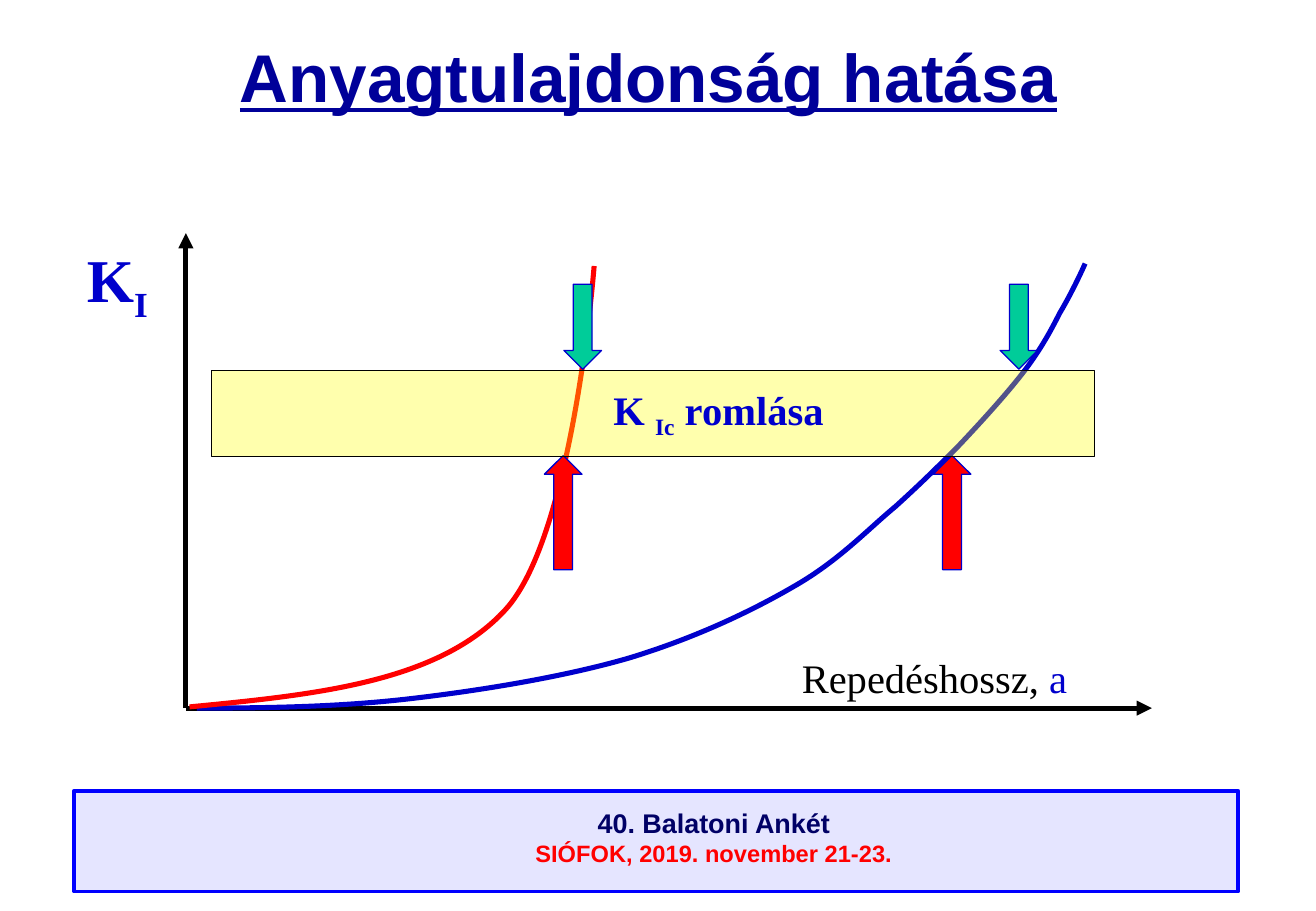
import pptx
import pptx.util
import pptx.dml.color
import pptx.enum.shapes
import pptx.enum.text
import pptx.oxml
import pptx.oxml.ns

PX = 9144  # EMU in one px, 100 px to the inch
SHAPES = pptx.enum.shapes.MSO_SHAPE
ALIGN = pptx.enum.text.PP_ALIGN
ANCHOR = pptx.enum.text.MSO_ANCHOR
COLORS = {
    "black": "000000", "blue": "0000CC", "red": "FF0000", "green": "00CC99",
    "yellow": "FFFF00", "lavender": "CCCCFF", "frame": "0000FF",
    "title": "000099", "footer": "000066",
}


def color(name):
    return pptx.dml.color.RGBColor.from_string(COLORS[name])


def child(parent, tag, **values):
    element = pptx.oxml.parse_xml(f"<a:{tag} {pptx.oxml.ns.nsdecls('a')}/>")
    for name, value in values.items():
        element.set(name, value)
    parent.append(element)
    return element


class Painter:
    """Holds the text style and the current slide."""

    style = {"name": "Times New Roman", "size": 24, "bold": False,
             "underline": False, "color": "black"}

    def __init__(self, page):
        self.page = page

    def outline(self, item, name, width):
        item.line.color.rgb = color(name)
        item.line.width = pptx.util.Pt(width)

    def shape(self, kind, left, top, width, height, fill, line, weight=0.75, opacity=100):
        item = self.page.shapes.add_shape(
            kind, *(value * PX for value in (left, top, width, height)))
        item.shadow.inherit = False
        item.fill.solid()
        item.fill.fore_color.rgb = color(fill)
        if opacity < 100:
            fill_color = item.fill._xPr.find(".//" + pptx.oxml.ns.qn("a:srgbClr"))
            child(fill_color, "alpha", val=str(opacity * 1000))
        self.outline(item, line, weight)

    def text(self, left, top, width, height, lines, align=ALIGN.LEFT,
             anchor=ANCHOR.TOP, spacing=None):
        """Each line is a list of (words, format values) spans."""
        box = self.page.shapes.add_textbox(
            *(value * PX for value in (left, top, width, height)))
        frame = box.text_frame
        frame.word_wrap = True
        frame.vertical_anchor = anchor
        for index, spans in enumerate(lines):
            para = frame.add_paragraph() if index else frame.paragraphs[0]
            para.alignment = align
            if spacing:
                para.line_spacing = spacing
            for words, changes in spans:
                self.span(para, words, {**self.style, **changes})

    def span(self, para, words, values):
        span = para.add_run()
        span.text = words
        for name, value in values.items():
            if name == "color":
                span.font.color.rgb = color(value)
            elif name == "baseline":
                span._r.get_or_add_rPr().set("baseline", str(value * 1000))
            else:
                setattr(span.font, name, pptx.util.Pt(value) if name == "size" else value)

    def arrow(self, start, end):
        item = self.page.shapes.add_connector(
            pptx.enum.shapes.MSO_CONNECTOR.STRAIGHT,
            *(value * PX for value in start + end))
        self.outline(item, "black", 3)
        child(item.line._get_or_add_ln(), "tailEnd", type="triangle")
        child(item._element.spPr, "effectLst")

    def curve(self, points, line):
        """Start point, then three points for each Bezier piece."""
        builder = self.page.shapes.build_freeform(*points[0], scale=PX)
        builder.add_line_segments(points[1:], close=False)
        item = builder.convert_to_shape()
        item.shadow.inherit = False
        item.fill.background()
        self.outline(item, line, 3)
        # Join every three straight segments into one Bezier piece
        outline = item._element.find(".//" + pptx.oxml.ns.qn("a:path"))
        segments = outline.findall(pptx.oxml.ns.qn("a:lnTo"))
        for first in range(0, len(segments), 3):
            bezier = child(outline, "cubicBezTo")
            for segment in segments[first:first + 3]:
                bezier.append(segment[0])
                outline.remove(segment)


def main():
    deck = pptx.Presentation()
    deck.slide_width, deck.slide_height = 1083 * PX, 750 * PX
    painter = Painter(deck.slides.add_slide(deck.slide_layouts[6]))

    # Footer
    footer = {"name": "Arial", "bold": True}
    painter.shape(SHAPES.RECTANGLE, 61, 651, 958, 83, "lavender", "frame", 2.25, 50)
    painter.text(179, 659, 817, 61, [
        [("40. Balatoni Ankét", {**footer, "size": 16, "color": "footer"})],
        [("SIÓFOK, 2019. november 21-23.", {**footer, "size": 14, "color": "red"})],
    ], ALIGN.CENTER)

    # Title
    painter.text(73, 0, 921, 125, [[("Anyagtulajdonság hatása", {
        "name": "Arial", "size": 40, "bold": True, "underline": True, "color": "title"})]],
        ALIGN.CENTER, ANCHOR.MIDDLE)

    # Axes and their labels
    origin = (153, 583)
    for tip in ((948, 583), (153, 192)):
        painter.arrow(origin, tip)
    strong = {"bold": True, "color": "blue"}
    big = {**strong, "size": 36}
    painter.text(42, 211, 109, 49, [[("K", big), ("I", {**big, "baseline": -25})]],
                 ALIGN.CENTER, spacing=0.6)
    painter.text(650, 533, 262, 50, [[("Repedéshossz,", {}), (" a", {"color": "blue"})]])

    # Crack growth curves
    painter.curve([
        (162, 583), (222, 583), (281, 582), (340, 575), (399, 568), (465, 557), (517, 542),
        (570, 526), (617, 504), (653, 483), (690, 462), (714, 436), (737, 417),
        (759, 397), (771, 385), (789, 367), (806, 349), (827, 326), (841, 308),
        (855, 290), (864, 274), (872, 258), (881, 243), (890, 224), (893, 217)], "blue")
    painter.curve([
        (156, 582), (259, 572), (361, 562), (416, 502),
        (472, 441), (489, 219), (489, 219)], "red")

    # Arrows at the upper and lower limits
    for left in (823, 464):
        painter.shape(SHAPES.DOWN_ARROW, left, 234, 31, 70, "green", "blue")
    for left in (448, 768):
        painter.shape(SHAPES.UP_ARROW, left, 375, 31, 94, "red", "blue")

    # Toughness band
    painter.shape(SHAPES.RECTANGLE, 174, 305, 727, 71, "yellow", "black", opacity=32)
    painter.text(495, 312, 211, 50, [[
        ("K ", strong), ("Ic", {**strong, "baseline": -25}), (" romlása", strong)]])

    deck.save("out.pptx")


if __name__ == "__main__":
    main()
